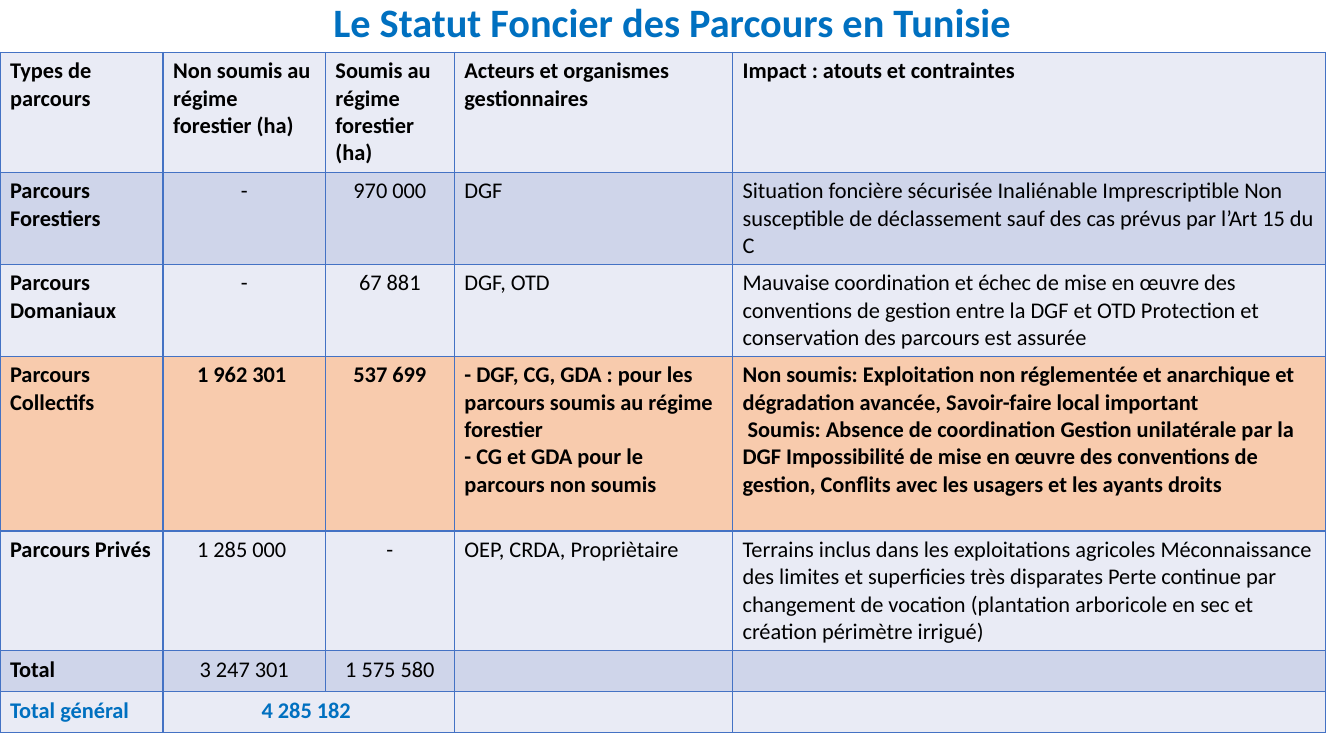
from dataclasses import dataclass
from lxml.etree import SubElement
from pptx import Presentation
from pptx.dml.color import RGBColor
from pptx.enum.text import MSO_ANCHOR, PP_ALIGN
from pptx.oxml.ns import qn
from pptx.util import Cm, Pt


@dataclass(frozen=True)
class Theme:
    font: str = "Calibri"
    head: float = 28.8
    body: float = 16
    ink: str = "000000"
    blue: str = "0070C0"
    line: str = "4472C4"
    pale: str = "E9EBF5"
    band: str = "CFD5EA"
    warm: str = "F8CBAD"


THEME = Theme()

WIDTHS = [4.11, 4.09, 3.25, 7.01, 14.94]

# Height in cm, fill, cell texts
ROWS = [
    (3.02, THEME.pale, [
        "Types de parcours", "Non soumis au régime forestier (ha)",
        "Soumis au régime forestier (ha)", "Acteurs et organismes gestionnaires",
        "Impact : atouts et contraintes"]),
    (2.32, THEME.band, [
        "Parcours Forestiers", "-", "970 000", "DGF",
        "Situation foncière sécurisée Inaliénable Imprescriptible Non susceptible "
        "de déclassement sauf des cas prévus par l’Art 15 du C"]),
    (2.32, THEME.pale, [
        "Parcours Domaniaux", "-", "67 881", "DGF, OTD",
        "Mauvaise coordination et échec de mise en œuvre des conventions de gestion "
        "entre la DGF et OTD Protection et conservation des parcours est assurée"]),
    (4.4, THEME.warm, [
        "Parcours Collectifs", "1 962 301 ", "537 699",
        "- DGF, CG, GDA : pour les parcours soumis au régime forestier\n"
        "- CG et GDA pour le parcours non soumis",
        "Non soumis: Exploitation non réglementée et anarchique et dégradation "
        "avancée, Savoir-faire local important\n"
        " Soumis: Absence de coordination Gestion unilatérale par la DGF "
        "Impossibilité de mise en œuvre des conventions de gestion, Conflits avec "
        "les usagers et les ayants droits"]),
    (3.02, THEME.pale, [
        "Parcours Privés", "1 285 000 ", "-", "OEP, CRDA, Propriètaire",
        "Terrains inclus dans les exploitations agricoles Méconnaissance des limites "
        "et superficies très disparates Perte continue par changement de vocation "
        "(plantation arboricole en sec et création périmètre irrigué)"]),
    (1.03, THEME.band, ["Total", "3 247 301", "1 575 580", "", ""]),
    (1.03, THEME.pale, ["Total général", "4 285 182 ", "", "", ""]),
]


def write(frame, text, size=THEME.body, color=THEME.ink, bold=False,
          align=PP_ALIGN.LEFT, space=None):
    for i, part in enumerate(text.split("\n")):
        para = frame.paragraphs[0] if i == 0 else frame.add_paragraph()
        para.alignment = align
        para.line_spacing = space
        para.font.size = Pt(size)
        if part:
            run = para.add_run()
            run.text = part
            font = run.font
            font.name, font.size, font.bold = THEME.font, Pt(size), bold
            font.color.rgb = RGBColor.from_string(color)


def paint(cell, fill):
    # Borders come before the fill in the cell properties
    props = cell._tc.get_or_add_tcPr()
    for side in ("a:lnL", "a:lnR", "a:lnT", "a:lnB"):
        line = SubElement(props, qn(side), w=str(Pt(1)))
        solid = SubElement(line, qn("a:solidFill"))
        SubElement(solid, qn("a:srgbClr"), val=THEME.line)
    cell.fill.solid()
    cell.fill.fore_color.rgb = RGBColor.from_string(fill)


def add_title(slide, left, top, width, height):
    box = slide.shapes.add_textbox(Cm(left), Cm(top), Cm(width), Cm(height))
    frame = box.text_frame
    frame.word_wrap = True
    frame.vertical_anchor = MSO_ANCHOR.MIDDLE
    write(frame, "Le Statut Foncier des Parcours en Tunisie", size=THEME.head,
          color=THEME.blue, bold=True, align=PP_ALIGN.CENTER, space=0.9)


def add_grid(slide, left, top):
    width, height = sum(WIDTHS), sum(row[0] for row in ROWS)
    table = slide.shapes.add_table(len(ROWS), len(WIDTHS), Cm(left), Cm(top),
                                   Cm(width), Cm(height)).table
    table.first_row = table.horz_banding = False
    for col, size in zip(table.columns, WIDTHS):
        col.width = Cm(size)
    last = len(ROWS) - 1
    for r, (tall, fill, texts) in enumerate(ROWS):
        table.rows[r].height = Cm(tall)
        for c, text in enumerate(texts):
            cell = table.cell(r, c)
            paint(cell, fill)
            bold = c == 0 or r in (0, last) or fill == THEME.warm
            number = r > 0 and c in (1, 2)
            write(cell.text_frame, text, bold=bold,
                  color=THEME.blue if r == last else THEME.ink,
                  align=PP_ALIGN.CENTER if number else PP_ALIGN.LEFT)
    # The grand total spans both area columns
    table.cell(last, 1).merge(table.cell(last, 2))


def main():
    deck = Presentation()
    deck.slide_width, deck.slide_height = Cm(33.87), Cm(19.05)
    slide = deck.slides.add_slide(deck.slide_layouts[6])
    add_title(slide, 2.34, 0.1, 29.21, 1.02)
    add_grid(slide, 0, 1.32)
    deck.save("out.pptx")


if __name__ == "__main__":
    main()
